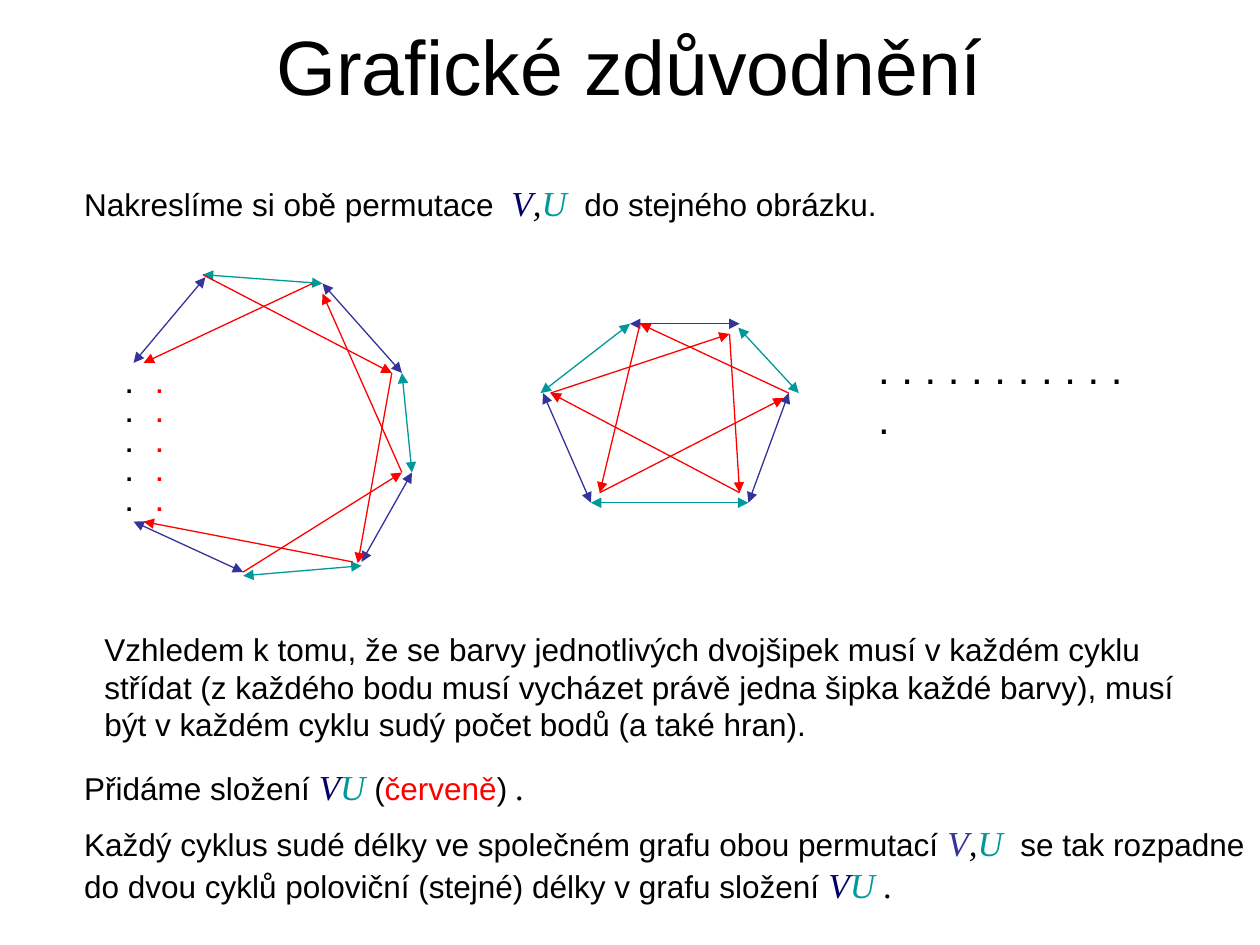
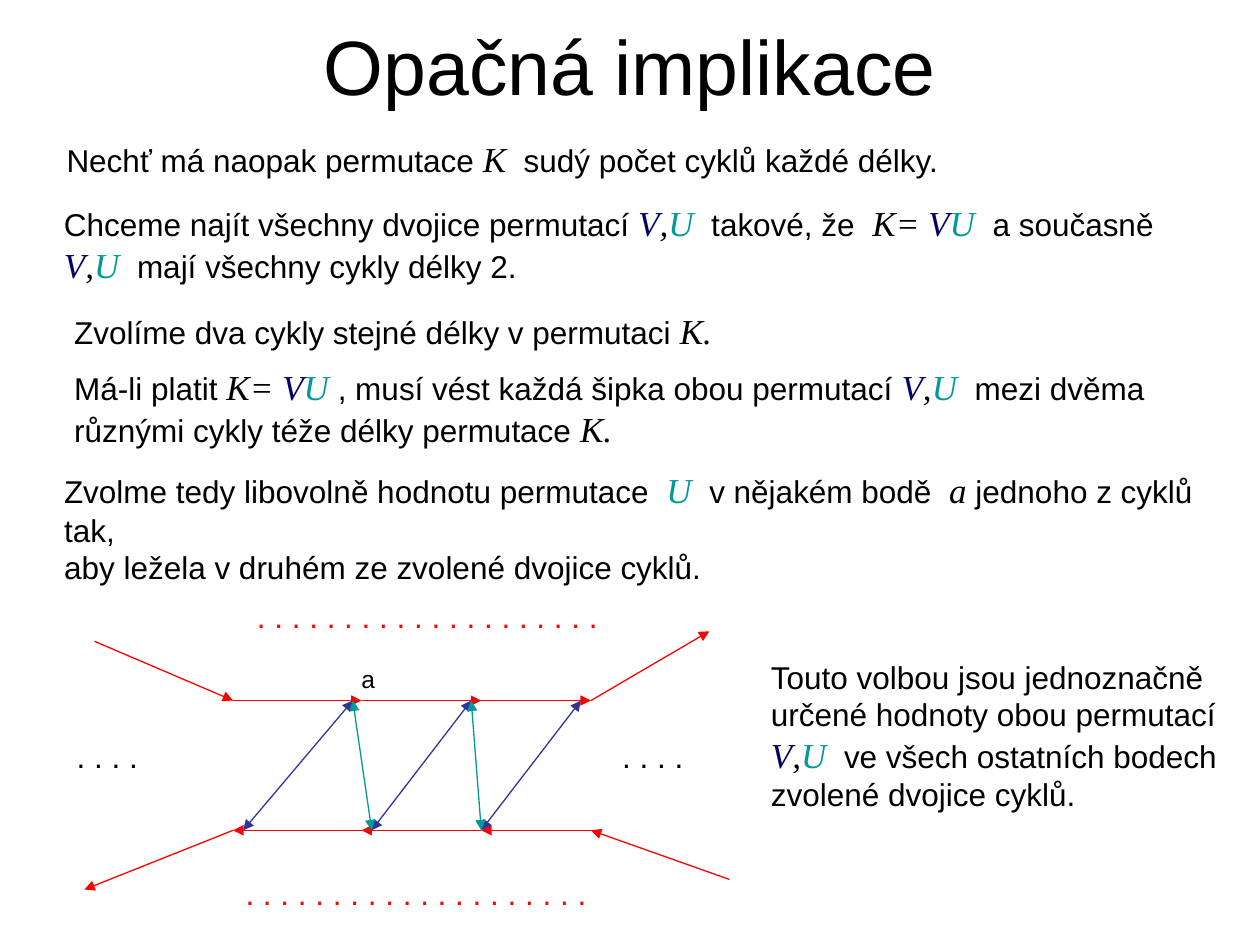
import itertools

import lxml.etree
import pptx
import pptx.dml.color
import pptx.enum.shapes
import pptx.enum.text
import pptx.oxml.ns
import pptx.util

BLACK = "000000"
NAVY = "000066"
INDIGO = "333399"
TEAL = "009999"
RED = "FF0000"

presentation = pptx.Presentation()
presentation.slide_width = pptx.util.Inches(10)
presentation.slide_height = pptx.util.Inches(7.5)
column = presentation.slide_width / 100
row = presentation.slide_height / 75

MATH = ("Times New Roman", 20, True)
TAGGED_STYLES = {
    "v:": (*MATH, NAVY),
    "b:": (*MATH, INDIGO),
    "u:": (*MATH, TEAL),
    "k:": (*MATH, BLACK),
    "r:": ("Arial", 18, False, RED),
}
TITLE_BOX = (5, 0.5, 90, 9.3)
LONG_DOTS = " ".join("." * 20)
SHORT_DOTS = " ".join("." * 4)


def paint(color_format, hex_color):
    color_format.rgb = pptx.dml.color.RGBColor.from_string(hex_color)


graph_texts = [
    (5.7, 13.9, 66, 4.3, 18, BLACK,
     ["Nakreslíme si obě permutace |k: |v:V|k:,|u:U  |do stejného obrázku."]),
    (11.4, 28.8, 2.6, 12.6, 14, RED, ["."] * 5),
    (9, 28.8, 2.6, 12.6, 14, BLACK, ["."] * 5),
    (68.7, 26.7, 23.2, 5, 24, BLACK, [" ".join("." * 12)]),
    (7.3, 49.5, 88, 10, 18, BLACK,
     ["Vzhledem k tomu, že se barvy jednotlivých dvojšipek musí v každém cyklu",
      "střídat (z každého bodu musí vycházet právě jedna šipka každé barvy), musí",
      "být v každém cyklu sudý počet bodů (a také hran)."]),
    (5.7, 60.3, 38, 4.3, 18, BLACK,
     ["Přidáme složení |v:V|u:U |(|r:červeně|)|k: ."]),
    (5.7, 64.7, 94.3, 7.7, 18, BLACK,
     ["Každý cyklus sudé délky ve společném grafu obou permutací "
      "|b:V|k:,|u:U|k:  |se tak rozpadne",
      "do dvou cyklů poloviční (stejné) délky v grafu složení |v:V|u:U |k:."]),
]

graph_arrows = [
    (INDIGO, True, [(10.6, 28.8), (16.3, 22)]),
    (TEAL, True, [(16.1, 21.8), (25.6, 22.5)]),
    (INDIGO, True, [(25.6, 22.5), (31.9, 29.6)]),
    (TEAL, True, [(31.9, 29.6), (32.7, 37.5)]),
    (INDIGO, True, [(32.7, 37.5), (28.7, 44.6)]),
    (TEAL, True, [(28.7, 44.9), (19.3, 45.7)]),
    (INDIGO, True, [(19.3, 45.4), (10.6, 41.4)]),
    (TEAL, True, [(42.9, 31.2), (50, 25.7)]),
    (INDIGO, True, [(50, 25.7), (58.7, 25.7)]),
    (TEAL, True, [(58.6, 26), (63.4, 31.2)]),
    (INDIGO, True, [(62.6, 31.2), (59.4, 39.9)]),
    (TEAL, True, [(59.4, 39.9), (46.9, 39.9)]),
    (INDIGO, True, [(46.9, 39.9), (43.1, 31.2)]),
    (RED, False, [(24.8, 22.5), (11.4, 28.8)]),
    (RED, False, [(19.3, 45.4), (31.9, 37.5), (25.6, 23.3)]),
    (RED, False, [(16.1, 21.8), (31.1, 29.6), (28.4, 44.7)]),
    (RED, False, [(28, 44.6), (11.4, 41.4)]),
    (RED, False, [(43.7, 31.2), (57.9, 26.5), (58.7, 39.1), (43.7, 31.2)]),
    (RED, False, [(62.6, 31.2), (50.8, 25.7), (47.6, 39.1), (62.2, 31.6)]),
]

converse_texts = [
    (4.3, 10.4, 73, 4.3, 18, BLACK,
     ["Nechť má naopak permutace |k:K | sudý počet cyklů každé délky."]),
    (4.1, 15.5, 90, 7.7, 18, BLACK,
     ["Chceme najít všechny dvojice permutací |v:V|k:,|u:U|  takové, že "
      "|k: K= |v:V|u:U  |a současně",
      "v:V|k:,|u:U  |mají všechny cykly délky 2."]),
    (4.9, 24.1, 54, 4.3, 18, BLACK,
     ["Zvolíme dva cykly stejné délky v permutaci |k:K."]),
    (4.9, 28.5, 88.5, 7.7, 18, BLACK,
     ["Má-li platit |k:K= |v:V|u:U| , musí vést každá šipka obou permutací "
      "|v:V|k:,|u:U  |mezi dvěma",
      "různými cykly téže délky permutace |k:K."]),
    (4.1, 36.7, 96.2, 7.3, 18, BLACK,
     ["Zvolme tedy libovolně hodnotu permutace  |u:U  |v nějakém bodě  "
      "|k:a |jednoho z cyklů tak,",
      "aby ležela v druhém ze zvolené dvojice cyklů."]),
    (60.2, 51.7, 38.5, 13.4, 18, BLACK,
     ["Touto volbou jsou jednoznačně",
      "určené hodnoty obou permutací",
      "v:V|k:,|u:U  |ve všech ostatních bodech",
      "zvolené dvojice cyklů."]),
    (27.7, 52.2, 3.1, 3.3, 14, BLACK, ["a"]),
    (19.4, 46.9, 30.5, 4, 18, RED, [LONG_DOTS]),
    (18.5, 68.9, 30.5, 4, 18, RED, [LONG_DOTS]),
    (48.4, 58, 8, 4, 18, BLACK, [SHORT_DOTS]),
    (5.1, 58, 8, 4, 18, BLACK, [SHORT_DOTS]),
]

upper, lower = 55.6, 65.9
cycle_columns = [18.5, 28.7, 38.2, 46.9]
upper_cycle = [(x, upper) for x in cycle_columns]
lower_cycle = [(x, lower) for x in reversed(cycle_columns)]
zigzag_columns = [(19.3, 28), (29.5, 37.4), (38.2, 46.1)]

converse_arrows = [
    (RED, False, [(7.5, 50.9), *upper_cycle, (56.3, 50.1)]),
    (RED, False, [(57.9, 69.8), *lower_cycle, (6.7, 70.6)]),
]
for bottom_column, top_column in zigzag_columns:
    converse_arrows.append((INDIGO, True, [(bottom_column, lower), (top_column, upper)]))
for (_, top_column), (bottom_column, _) in itertools.pairwise(zigzag_columns):
    converse_arrows.append((TEAL, True, [(bottom_column, lower), (top_column, upper)]))

slide_contents = [
    ("Grafické zdůvodnění", graph_texts, graph_arrows),
    ("Opačná implikace", converse_texts, converse_arrows),
]

for title, texts, arrows in slide_contents:
    slide = presentation.slides.add_slide(presentation.slide_layouts[6])

    for left, top, width, height, size, color, lines in [
        (*TITLE_BOX, 44, BLACK, [title]), *texts
    ]:
        text_box = slide.shapes.add_textbox(
            round(left * column), round(top * row),
            round(width * column), round(height * row))
        frame = text_box.text_frame
        frame.word_wrap = True
        is_title = size == 44
        if is_title:
            frame.vertical_anchor = pptx.enum.text.MSO_ANCHOR.MIDDLE
        for index, line in enumerate(lines):
            paragraph = frame.add_paragraph() if index else frame.paragraphs[0]
            if is_title:
                paragraph.alignment = pptx.enum.text.PP_ALIGN.CENTER
            pieces = line.split("|")
            for piece in pieces:
                plain_style = ("Arial", size, False, color)
                style = TAGGED_STYLES.get(piece[:2], plain_style)
                run = paragraph.add_run()
                run.text = piece[2:] if piece[:2] in TAGGED_STYLES else piece
                font = run.font if len(pieces) > 1 else paragraph.font
                font.name, points, font.italic, font_color = style
                font.size = pptx.util.Pt(points)
                font.bold = lines == ["."] * 5
                paint(font.color, font_color)

    for color, double_headed, points in arrows:
        for start, end in itertools.pairwise(points):
            arrow = slide.shapes.add_connector(
                pptx.enum.shapes.MSO_CONNECTOR.STRAIGHT,
                round(start[0] * column), round(start[1] * row),
                round(end[0] * column), round(end[1] * row))
            arrow.line.width = pptx.util.Pt(0.75)
            arrow.line.fill.solid()
            paint(arrow.line.fill.fore_color, color)
            properties = arrow._element.spPr
            outline = properties.find(pptx.oxml.ns.qn("a:ln"))
            for tip in ["headEnd", "tailEnd"] if double_headed else ["tailEnd"]:
                lxml.etree.SubElement(
                    outline, pptx.oxml.ns.qn(f"a:{tip}"), type="triangle")
            lxml.etree.SubElement(properties, pptx.oxml.ns.qn("a:effectLst"))

presentation.save("out.pptx")
